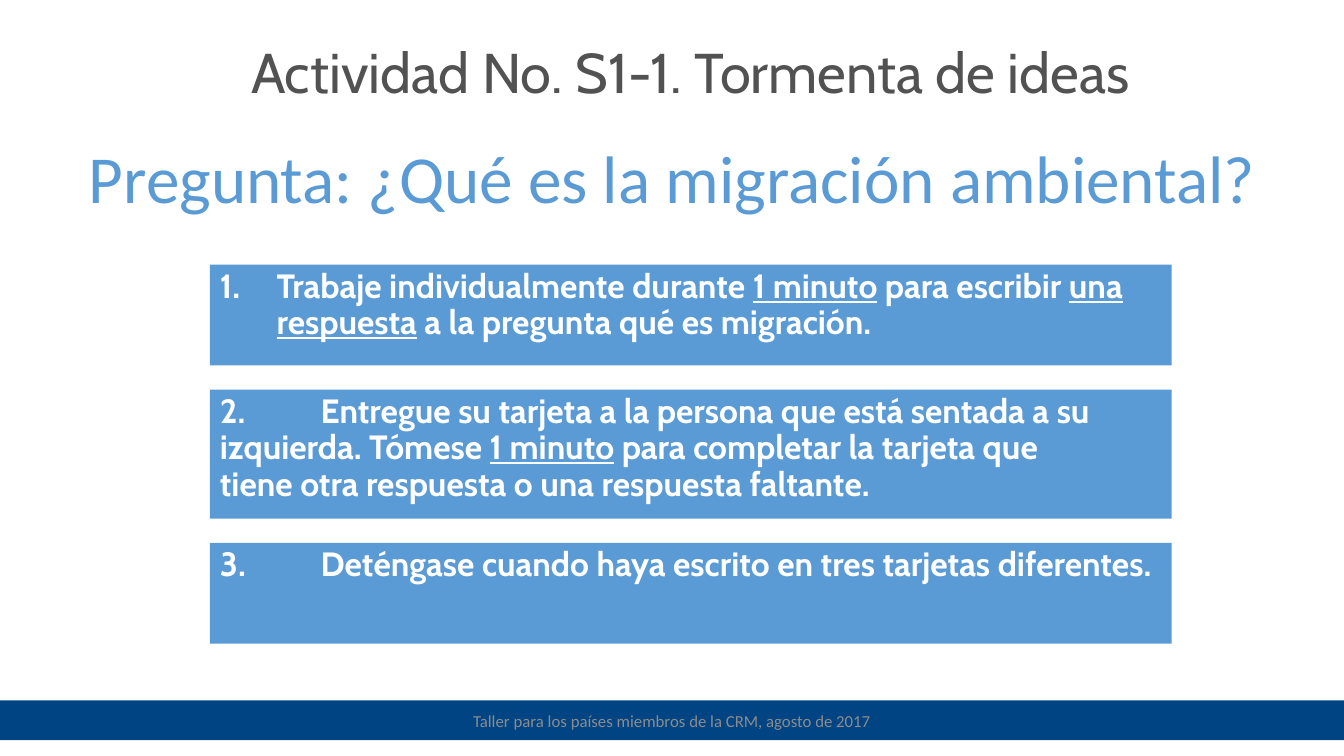
from dataclasses import dataclass

from pptx import Presentation
from pptx import util as u
from pptx.dml import color
from pptx.enum import shapes, text
from pptx.oxml import xmlchemy

PX = 9525  # EMU per px, 96 px to the inch


@dataclass(frozen=True)
class Theme:
    heading_font: str = "Cabin"
    body_font: str = "Calibri"
    blue: str = "5B9BD5"
    navy: str = "004483"
    dark_grey: str = "525252"
    light_grey: str = "8C8C8C"
    white: str = "FFFFFF"
    question_size: int = 48
    title_size: int = 40
    step_size: int = 24
    footer_size: int = 12


THEME = Theme()

STEP_GAP = 23
NUMBER_INDENT = 54
TAB_WIDTH = 96
# Each step: height, numbered automatically, and (wording, underlined) parts
STEPS = [
    (96, True, [
        ("Trabaje individualmente durante ", False),
        ("1 minuto", True),
        (" para escribir ", False),
        ("una respuesta", True),
        (" a la pregunta qué es migración.", False),
    ]),
    (123, False, [
        ("2. \tEntregue su tarjeta a la persona que está sentada a su "
         "\tizquierda. Tómese ", False),
        ("1 minuto", True),
        (" para completar la tarjeta que "
         "\ttiene otra respuesta o una respuesta faltante.", False),
    ]),
    (96, False, [
        ("3. \tDeténgase cuando haya escrito en tres tarjetas diferentes.", False),
    ]),
]


def set_values(target, values):
    for name, value in values.items():
        setattr(target, name, value)


def emu(box):
    return [length * PX for length in box]


def add_panel(slide, box, fill):
    """Plain filled rectangle without line or shadow."""
    panel = slide.shapes.add_shape(shapes.MSO_SHAPE.RECTANGLE, *emu(box))
    panel.shadow.inherit = False
    panel.fill.solid()
    panel.fill.fore_color.rgb = color.RGBColor.from_string(fill)
    panel.line.fill.background()
    return panel


def write(shape, parts, font, ink, anchor, paragraph_format):
    """Fill a shape with one paragraph of (wording, underlined) parts."""
    set_values(shape.text_frame, {"word_wrap": True, "vertical_anchor": anchor})
    paragraph = shape.text_frame.paragraphs[0]
    set_values(paragraph, paragraph_format)
    for wording, underlined in parts:
        run = paragraph.add_run()
        run.text = wording
        set_values(run.font, {**font, "underline": underlined})
        run.font.color.rgb = color.RGBColor.from_string(ink)
    return paragraph


def add_heading(slide, box, wording, font, ink, anchor, line_spacing):
    heading = slide.shapes.add_textbox(*emu(box))
    write(heading, [(wording, False)], font, ink, anchor,
          {"alignment": text.PP_ALIGN.CENTER, "line_spacing": line_spacing})


def number_paragraph(paragraph):
    """Automatic number with a hanging indent."""
    properties = paragraph._p.get_or_add_pPr()
    properties.set("marL", str(NUMBER_INDENT * PX))
    properties.set("indent", str(-NUMBER_INDENT * PX))
    bullet = xmlchemy.OxmlElement("a:buAutoNum")
    bullet.set("type", "arabicPeriod")
    properties.append(bullet)


def set_tab_width(paragraph):
    """Distance between the default tab stops."""
    paragraph._p.get_or_add_pPr().set("defTabSz", str(TAB_WIDTH * PX))


def add_steps(slide, left, top, width):
    font = {"name": THEME.heading_font, "size": u.Pt(THEME.step_size), "bold": True}
    for height, numbered, parts in STEPS:
        panel = add_panel(slide, (left, top, width, height), THEME.blue)
        paragraph = write(panel, parts, font, THEME.white, text.MSO_ANCHOR.TOP, {
            "alignment": text.PP_ALIGN.LEFT,
            "line_spacing": 0.9,
            "space_before": u.Pt(10),
            "space_after": u.Pt(6 if numbered else 0),
        })
        if numbered:
            number_paragraph(paragraph)
        else:
            set_tab_width(paragraph)
        top += height + STEP_GAP


def add_footer(slide, box, wording):
    band = add_panel(slide, box, THEME.navy)
    font = {"name": THEME.body_font, "size": u.Pt(THEME.footer_size)}
    write(band, [(wording, False)], font, THEME.light_grey,
          text.MSO_ANCHOR.MIDDLE, {"alignment": text.PP_ALIGN.CENTER})


def build_activity_slide(presentation):
    slide = presentation.slides.add_slide(presentation.slide_layouts[6])
    # Question and title
    add_heading(slide, (29, 125, 1223, 87),
                "Pregunta: ¿Qué es la migración ambiental?",
                {"name": THEME.body_font, "size": u.Pt(THEME.question_size)},
                THEME.blue, text.MSO_ANCHOR.TOP, 1.0)
    add_heading(slide, (125, 39, 1065, 66),
                "Actividad No. S1-1. Tormenta de ideas",
                {"name": THEME.heading_font, "size": u.Pt(THEME.title_size)},
                THEME.dark_grey, text.MSO_ANCHOR.MIDDLE, 0.9)
    # Instructions
    add_steps(slide, 200, 252, 916)
    # Footer band
    add_footer(slide, (0, 667, 1280, 38),
               "Taller para los países miembros de la CRM, agosto de 2017")


def main():
    presentation = Presentation()
    set_values(presentation, {"slide_width": 1280 * PX, "slide_height": 720 * PX})
    build_activity_slide(presentation)
    presentation.save("out.pptx")


if __name__ == "__main__":
    main()
